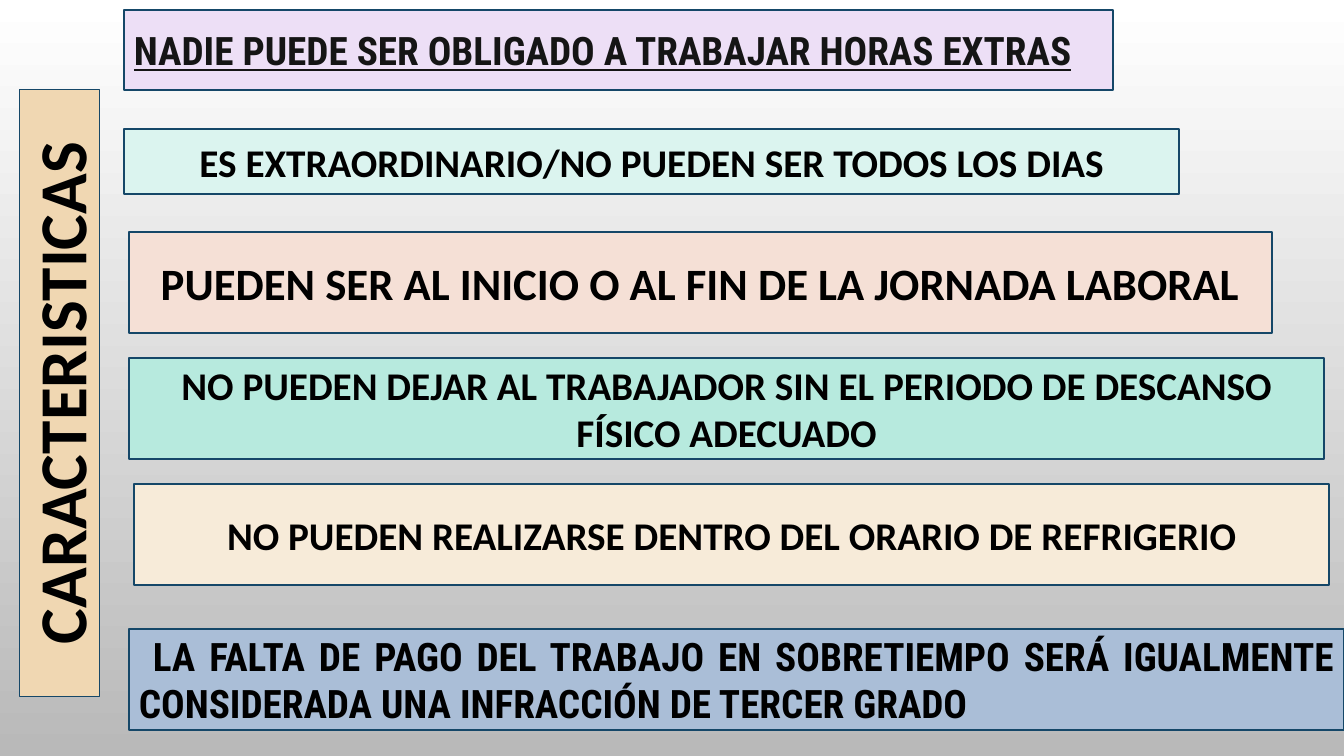
from pptx import Presentation
from pptx.dml.color import RGBColor
from pptx.enum.shapes import MSO_SHAPE
from pptx.enum.text import MSO_ANCHOR, MSO_AUTO_SIZE, PP_ALIGN
from pptx.util import Emu, Pt

RECTANGLE = MSO_SHAPE.RECTANGLE
MIDDLE = MSO_ANCHOR.MIDDLE
NO_AUTOFIT = MSO_AUTO_SIZE.NONE
CENTER, JUSTIFY = PP_ALIGN.CENTER, PP_ALIGN.JUSTIFY

EMU_PER_PX = 914400 / 100.8
TITLE_ONLY = 5
SANS, CONDENSED = "Calibri", "Roboto Condensed"

COLORS = {
    "white": "FFFFFF",
    "gray": "B9B9B9",
    "black": "000000",
    "charcoal": "151515",
    "outline": "154768",
    "sand": "F0D7B2",
    "lilac": "EDDFF6",
    "mint": "DBF4EF",
    "peach": "F5E0D6",
    "aqua": "B7EADE",
    "cream": "F7EBD9",
    "blue": "AABED7",
}


def px(length):
    return Emu(round(length * EMU_PER_PX))


def color(name):
    return RGBColor.from_string(COLORS[name])


class SlideBuilder:
    def __init__(self, slide):
        self.slide = slide

    def background(self, top, bottom):
        fill = self.slide.background.fill
        fill.gradient()
        fill.gradient_angle = 270
        for stop, name, position in zip(fill.gradient_stops, (top, bottom), (0, 1)):
            stop.color.rgb = color(name)
            stop.position = position

    def paint(self, shape, fill):
        shape.shadow.inherit = False
        shape.fill.solid()
        shape.fill.fore_color.rgb = color(fill)
        shape.line.color.rgb = color("outline")
        shape.line.width = Pt(1.25)

    def set_text(self, shape, text, size, font=SANS, ink="black", align=CENTER, underline=None):
        frame = shape.text_frame
        frame.word_wrap = True
        frame.auto_size = NO_AUTOFIT
        frame.vertical_anchor = MIDDLE
        paragraph = frame.paragraphs[0]
        paragraph.alignment = align
        run = paragraph.add_run()
        run.text = text
        run.font.name = font
        run.font.size = Pt(size)
        run.font.bold = True
        run.font.underline = underline
        run.font.color.rgb = color(ink)

    def side_title(self, text, left, top, width, height, fill, size):
        title = self.slide.shapes.title
        title.left, title.top = px(left), px(top)
        title.width, title.height = px(width), px(height)
        title.rotation = 270
        self.paint(title, fill)
        self.set_text(title, text, size)

    def statement(self, text, left, top, width, height, fill, size=28, **style):
        box = self.slide.shapes.add_shape(
            RECTANGLE, px(left), px(top), px(width), px(height))
        self.paint(box, fill)
        self.set_text(box, text, size, **style)


def main():
    deck = Presentation()
    deck.slide_width, deck.slide_height = px(1344), px(756)
    builder = SlideBuilder(deck.slides.add_slide(deck.slide_layouts[TITLE_ONLY]))
    builder.background("white", "gray")
    builder.side_title("CARACTERISTICAS", -244, 353, 607, 80, "sand", 48)
    builder.statement("NADIE PUEDE SER OBLIGADO A TRABAJAR HORAS EXTRAS",
                      124, 10, 989, 80, "lilac", font=CONDENSED,
                      ink="charcoal", align=JUSTIFY, underline=True)
    builder.statement("ES EXTRAORDINARIO/NO PUEDEN SER TODOS LOS DIAS",
                      124, 129, 1055, 65, "mint")
    builder.statement("PUEDEN SER AL INICIO O AL FIN DE LA JORNADA LABORAL",
                      129, 232, 1143, 101, "peach", size=32)
    builder.statement("NO PUEDEN DEJAR AL TRABAJADOR SIN EL PERIODO DE DESCANSO FÍSICO ADECUADO",
                      129, 358, 1195, 101, "aqua")
    builder.statement("NO PUEDEN REALIZARSE DENTRO DEL ORARIO DE REFRIGERIO",
                      134, 484, 1195, 101, "cream")
    builder.statement(" LA FALTA DE PAGO DEL TRABAJO EN SOBRETIEMPO SERÁ IGUALMENTE "
                      "CONSIDERADA UNA INFRACCIÓN DE TERCER GRADO",
                      129, 629, 1215, 101, "blue", font=CONDENSED, align=JUSTIFY)
    deck.save("out.pptx")


if __name__ == "__main__":
    main()
